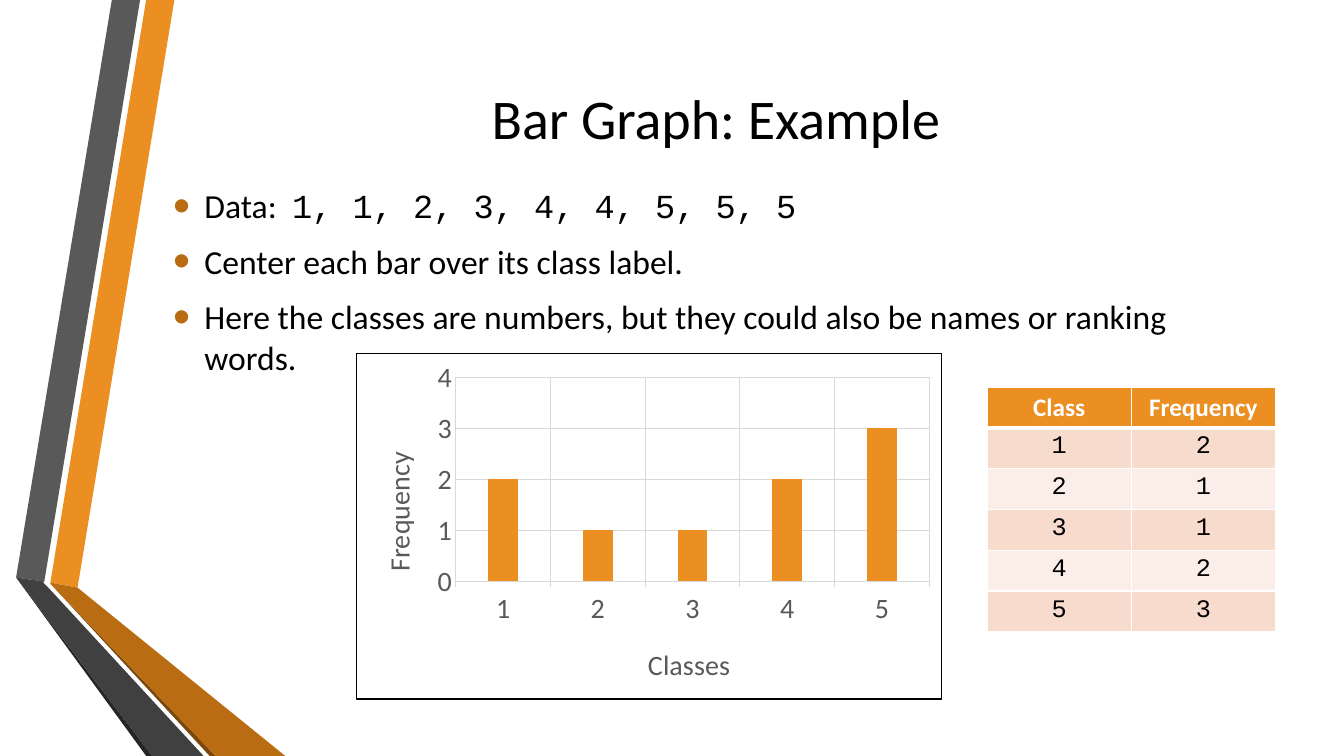
"""Builds a slide with a bar graph example, its data and its frequency table."""
from pptx import Presentation
from pptx.chart.data import CategoryChartData as Data
from pptx.dml.color import RGBColor as RGB
from pptx.enum.chart import XL_CHART_TYPE as Kind, XL_TICK_MARK as Tick
from pptx.enum.text import MSO_ANCHOR as Anchor, PP_ALIGN as Align
from pptx.oxml import parse_xml
from pptx.oxml.ns import nsdecls, qn
from pptx.util import Inches, Pt

HUES = {
    "orange": "EB8F22", "rust": "B96C11", "brown": "7B480B",
    "gray": "595959", "dark": "404040", "coal": "262626",
    "grid": "D9D9D9", "peach": "F7DBCD", "blush": "FBEEE8",
    "black": "000000", "white": "FFFFFF",
}


def style(font, size, hue, name="Calibri", bold=False):
    for key, value in {"size": Pt(size), "name": name, "bold": bold}.items():
        setattr(font, key, value)
    font.color.rgb = RGB.from_string(HUES[hue])


def place(node, index, **parts):
    for old in node.findall(qn("c:layout")):
        node.remove(old)
    rules = "".join(f'<c:{key} val="{value}"/>' for key, value in parts.items())
    node.insert(index, parse_xml(
        f'<c:layout {nsdecls("c")}><c:manualLayout>{rules}</c:manualLayout></c:layout>'))


deck = Presentation()
deck.slide_width, deck.slide_height = Inches(13.33), Inches(7.5)
slide = deck.slides.add_slide(deck.slide_layouts[6])
shapes = slide.shapes

bands = [
    ("orange", [(0.5, 5.78), (0.77, 5.83), (1.73, 0), (1.45, 0)]),
    ("gray", [(1.39, 0), (1.11, 0), (0.16, 5.73), (0.44, 5.77)]),
    ("coal", [(0.16, 5.73), (1.45, 7.5), (1.51, 7.5)]),
    ("brown", [(0.5, 5.79), (2.08, 7.5), (2.14, 7.5)]),
    ("rust", [(0.5, 5.79), (2.14, 7.5), (2.83, 7.5), (0.77, 5.83), (0.5, 5.78)]),
    ("dark", [(2.02, 7.5), (0.48, 5.83), (0.43, 5.78), (0.44, 5.77),
              (0.16, 5.73), (1.51, 7.5)]),
]
for hue, spots in bands:
    start, *rest = [(Inches(x), Inches(y)) for x, y in spots]
    pen = shapes.build_freeform(*start)
    pen.add_line_segments(rest, close=True)
    band = pen.convert_to_shape()
    band.shadow.inherit = False
    band.fill.solid()
    band.fill.fore_color.rgb = RGB.from_string(HUES[hue])
    band.line.fill.background()

title = shapes.add_textbox(Inches(1.62), Inches(0.75), Inches(10.96), Inches(0.82)).text_frame
title.word_wrap = True
title.vertical_anchor = Anchor.MIDDLE
head = title.paragraphs[0]
head.alignment = Align.CENTER
run = head.add_run()
run.text = "Bar Graph: Example"
style(run.font, 40, "black")

body = shapes.add_textbox(Inches(1.62), Inches(1.79), Inches(10.96), Inches(4.54)).text_frame
body.word_wrap = True
points = [
    [("Data:  ", "Calibri"), ("1, 1, 2, 3, 4, 4, 5, 5, 5", "Courier New")],
    [("Center each bar over its class label.", "Calibri")],
    [("Here the classes are numbers, but they could also be names or ranking words.",
      "Calibri")],
]
for index, point in enumerate(points):
    para = body.add_paragraph() if index else body.paragraphs[0]
    para.space_before, para.space_after = Pt(4.8), Pt(6)
    props = para._p.get_or_add_pPr()
    props.set("marL", str(Inches(0.31)))
    props.set("indent", str(-Inches(0.31)))
    for mark in (f'<a:buClr {nsdecls("a")}><a:srgbClr val="{HUES["rust"]}"/></a:buClr>',
                 f'<a:buSzPct {nsdecls("a")} val="145000"/>',
                 f'<a:buFont {nsdecls("a")} typeface="Arial"/>',
                 f'<a:buChar {nsdecls("a")} char="•"/>'):
        props.append(parse_xml(mark))
    for text, face in point:
        run = para.add_run()
        run.text = text
        style(run.font, 24, "black", face)

counts = {"1": 2, "2": 1, "3": 1, "4": 2, "5": 3}
rows = [("Class", "Frequency"), *counts.items()]
table = shapes.add_table(len(rows), 2, Inches(9.79), Inches(3.84),
                         Inches(2.86), Inches(2.43)).table
for r, row in enumerate(rows):
    table.rows[r].height = Inches(0.405)
    fill = ("peach" if r % 2 else "blush") if r else "orange"
    edges = {"L": 1, "R": 1, "T": 3 if r == 1 else 1, "B": 1 if r else 3}
    for c, value in enumerate(row):
        cell = table.cell(r, c)
        cell.fill.solid()
        cell.fill.fore_color.rgb = RGB.from_string(HUES[fill])
        para = cell.text_frame.paragraphs[0]
        para.alignment = Align.CENTER
        run = para.add_run()
        run.text = str(value)
        if r:
            style(run.font, 18, "black", "Courier New")
        else:
            style(run.font, 18, "white", bold=True)
        props = cell._tc.get_or_add_tcPr()
        for spot, (side, width) in enumerate(edges.items()):
            props.insert(spot, parse_xml(
                f'<a:ln{side} {nsdecls("a")} w="{Pt(width)}"><a:solidFill>'
                f'<a:srgbClr val="{HUES["white"]}"/></a:solidFill></a:ln{side}>'))

data = Data()
data.categories = list(counts)
data.add_series("Series 1", list(counts.values()))
chart = shapes.add_chart(Kind.COLUMN_CLUSTERED, Inches(3.53), Inches(3.5),
                         Inches(5.81), Inches(3.44), data).chart
chart.has_legend = chart.has_title = False
style(chart.font, 20, "black")
plot = chart.plots[0]
plot.vary_by_categories = False
plot.gap_width, plot.overlap = 219, -27
bars = plot.series[0].format.fill
bars.solid()
bars.fore_color.rgb = RGB.from_string(HUES["orange"])

across, up = chart.category_axis, chart.value_axis
for axis, name, x, y in ((across, "Classes", 0.49, 0.83), (up, "Frequency", 0.03, 0.27)):
    axis.has_major_gridlines = True
    for line in (axis.format.line, axis.major_gridlines.format.line):
        line.color.rgb = RGB.from_string(HUES["grid"])
        line.width = Pt(0.75)
    style(axis.tick_labels.font, 20, "gray")
    run = axis.axis_title.text_frame.paragraphs[0].add_run()
    run.text = name
    style(run.font, 20, "gray")
    place(axis.axis_title._element, 1, xMode="edge", yMode="edge", x=x, y=y)
across.major_tick_mark = Tick.OUTSIDE
up.major_tick_mark = Tick.NONE
up.format.line.fill.background()
up.minimum_scale, up.maximum_scale, up.major_unit = 0, 4, 1

space = chart._chartSpace
place(space.chart.plotArea, 0, layoutTarget="inner", xMode="edge", yMode="edge",
      x=0.17, y=0.07, w=0.81, h=0.59)
space.chart.addnext(parse_xml(
    f'<c:spPr {nsdecls("c", "a")}><a:noFill/><a:ln w="{Pt(0.75)}"><a:solidFill>'
    f'<a:srgbClr val="{HUES["black"]}"/></a:solidFill></a:ln></c:spPr>'))

deck.save("out.pptx")
